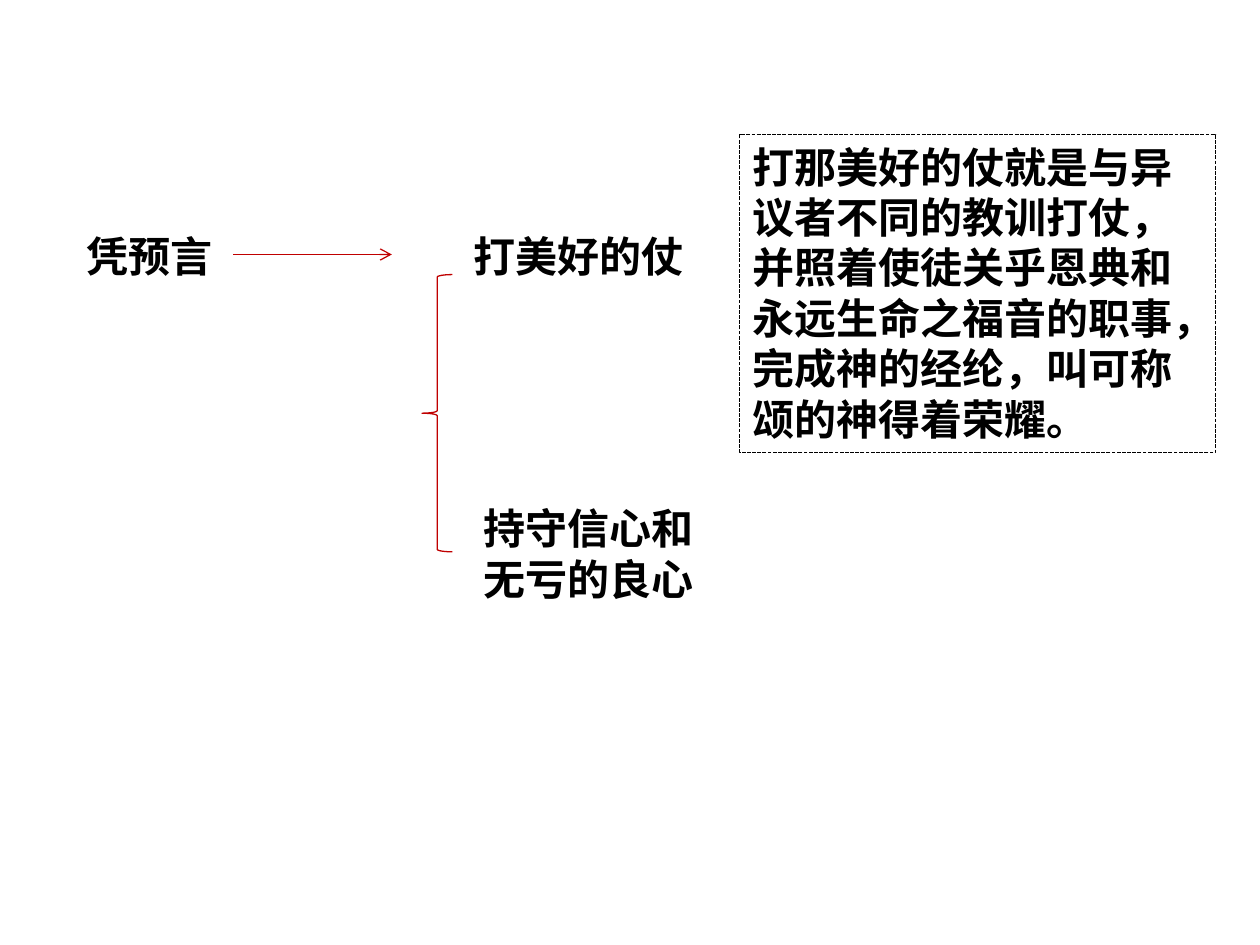
import pptx
import pptx.util
import pptx.dml.color
import pptx.enum.dml
import pptx.enum.shapes
import pptx.enum.text
import pptx.oxml.ns
import lxml.etree
from dataclasses import dataclass

Inches = pptx.util.Inches
Pt = pptx.util.Pt
qn = pptx.oxml.ns.qn
RGBColor = pptx.dml.color.RGBColor
Shapes = pptx.enum.shapes.MSO_SHAPE


@dataclass
class Theme:
    ink = RGBColor(0, 0, 0)
    accent = RGBColor(0xC0, 0, 0)
    size = Pt(24)
    line = Pt(0.75)
    latin = "Calibri"
    chinese = "Noto Sans CJK SC"


theme = Theme()


def write(box, text, font_name, wrap):
    frame = box.text_frame
    frame.word_wrap = wrap
    frame.auto_size = pptx.enum.text.MSO_AUTO_SIZE.SHAPE_TO_FIT_TEXT
    frame.vertical_anchor = pptx.enum.text.MSO_ANCHOR.TOP
    para = frame.paragraphs[0]
    para.text = text
    para.alignment = pptx.enum.text.PP_ALIGN.LEFT
    para.font.name = font_name
    para.font.size = theme.size
    para.font.bold = True
    para.font.color.rgb = theme.ink
    properties = para.font._element
    lxml.etree.SubElement(properties, qn("a:ea"), typeface=theme.chinese)


deck = pptx.Presentation()
deck.slide_width = Inches(10)
deck.slide_height = Inches(7.5)
page = deck.slides.add_slide(deck.slide_layouts[6])

labels = [
    ("凭预言", 0.59, 1.78, 1.21, 0.5, False),
    ("打美好的仗", 3.66, 1.78, 1.88, 0.5, False),
    ("持守信心和无亏的良心", 3.74, 3.94, 1.97, 0.91, True),
]
for text, left, top, width, height, wrap in labels:
    label = page.shapes.add_textbox(Inches(left), Inches(top), Inches(width), Inches(height))
    write(label, text, theme.latin, wrap)

arrow = page.shapes.add_connector(
    pptx.enum.shapes.MSO_CONNECTOR.STRAIGHT,
    Inches(1.85), Inches(2.02), Inches(3.11), Inches(2.02),
)
arrow.line.color.rgb = theme.accent
arrow.line.width = theme.line
lxml.etree.SubElement(arrow.line._get_or_add_ln(), qn("a:tailEnd"), type="arrow")
lxml.etree.SubElement(arrow._element.spPr, qn("a:effectLst"))

explanation = page.shapes.add_shape(
    Shapes.RECTANGLE, Inches(5.87), Inches(1.07), Inches(3.78), Inches(2.52)
)
write(
    explanation,
    "打那美好的仗就是与异议者不同的教训打仗，并照着使徒关乎恩典和永远生命之福音的职事，"
    "完成神的经纶，叫可称颂的神得着荣耀。",
    theme.chinese,
    True,
)
brace = page.shapes.add_shape(
    Shapes.LEFT_BRACE, Inches(3.35), Inches(2.18), Inches(0.24), Inches(2.2)
)
for shape, color in [(explanation, theme.ink), (brace, theme.accent)]:
    shape.shadow.inherit = False
    shape.fill.background()
    shape.line.color.rgb = color
    shape.line.width = theme.line
explanation.line.dash_style = pptx.enum.dml.MSO_LINE.SQUARE_DOT

deck.save("out.pptx")
